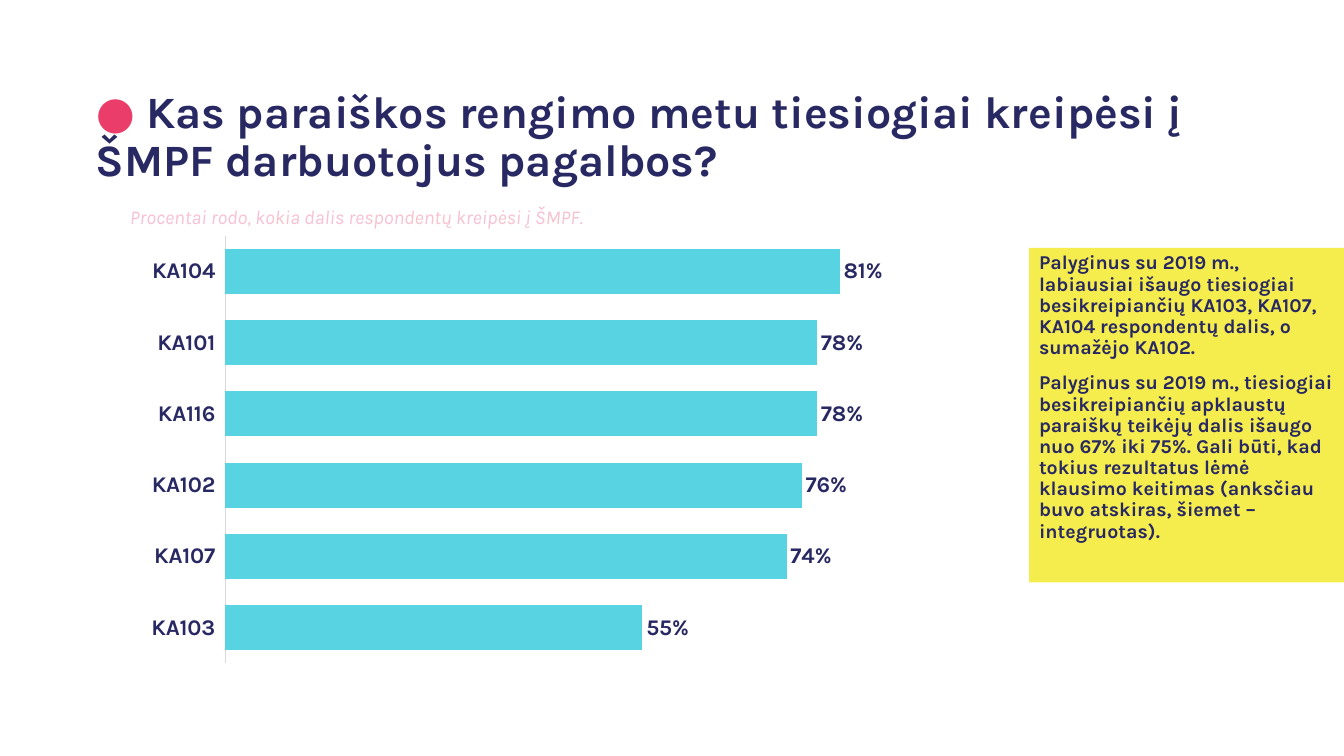
"""Build the slide on which applicants turned directly to ŠMPF staff for help."""
from lxml.etree import SubElement
from pptx import Presentation
from pptx.chart.data import CategoryChartData
from pptx.dml.color import RGBColor
from pptx.enum.chart import XL_CHART_TYPE as ChartType, XL_LABEL_POSITION as LabelPosition
from pptx.enum.chart import XL_TICK_LABEL_POSITION as TickLabels, XL_TICK_MARK as TickMark
from pptx.enum.shapes import MSO_SHAPE as ShapeKind
from pptx.enum.text import MSO_ANCHOR as Anchor, MSO_AUTO_SIZE as AutoSize, PP_ALIGN as Align
from pptx.oxml.ns import qn
from pptx.util import Pt

TITLE = [("● ", "EA3D69"),
         ("Kas paraiškos rengimo metu tiesiogiai kreipėsi į ŠMPF darbuotojus pagalbos?", "282863")]
SUBTITLE = "Procentai rodo, kokia dalis respondentų kreipėsi į ŠMPF."
NOTES = [
    "Palyginus su 2019 m., labiausiai išaugo tiesiogiai besikreipiančių KA103, KA107, "
    "KA104 respondentų dalis, o sumažėjo KA102.",
    "Palyginus su 2019 m., tiesiogiai besikreipiančių apklaustų paraiškų teikėjų dalis išaugo "
    "nuo 67% iki 75%. Gali būti, kad tokius rezultatus lėmė klausimo keitimas "
    "(anksčiau buvo atskiras, šiemet – integruotas).",
]
SHARES = {"KA103": 0.55, "KA107": 0.74, "KA102": 0.76,
          "KA116": 0.78, "KA101": 0.78, "KA104": 0.81}
NAVY, TEAL, YELLOW, PINK, GREY = "282863", "58D3E1", "F5EC4D", "F7C1D0", "D9D9D9"
FONT = "Karla"
SLIDE_SIZE = (960, 540)
TITLE_BOX = (46.8, 60.5, 824.4, 85)
SUBTITLE_BOX = (85.7, 141.1, 569.5, 24.5)
CHART_BOX = (101.5, 162.7, 559.4, 317.5)
NOTES_BOX = (735.1, 177.1, 224.9, 239)
PLOT_AREA = {"x": 0.106, "y": 0.018, "w": 0.872, "h": 0.962}


def color(value):
    return RGBColor.from_string(value)


def box(numbers):
    return [Pt(number) for number in numbers]


def style(font, size, value, bold=False, italic=False):
    font.name, font.size, font.bold, font.italic = FONT, Pt(size), bold, italic
    font.color.rgb = color(value)


def space(paragraph, lines, before=0):
    paragraph.alignment = Align.LEFT
    paragraph.line_spacing = lines
    paragraph.space_before = Pt(before)


def add_title(slide):
    title = slide.shapes.title
    title.left, title.top, title.width, title.height = box(TITLE_BOX)
    frame = title.text_frame
    frame.word_wrap, frame.auto_size = True, AutoSize.NONE
    frame.vertical_anchor = Anchor.TOP
    paragraph = frame.paragraphs[0]
    for text, value in TITLE:
        run = paragraph.add_run()
        run.text = text
        style(run.font, 32, value, bold=True)
    space(paragraph, 0.9, 10)
    properties = paragraph._p.get_or_add_pPr()
    properties.set("marL", str(Pt(14.4)))
    properties.set("indent", "0")


def add_subtitle(slide):
    frame = slide.shapes.add_textbox(*box(SUBTITLE_BOX)).text_frame
    frame.word_wrap = True
    frame.text = SUBTITLE
    paragraph = frame.paragraphs[0]
    space(paragraph, 1.1)
    style(paragraph.runs[0].font, 14, PINK, italic=True)


def add_notes(slide):
    shape = slide.shapes.add_shape(ShapeKind.RECTANGLE, *box(NOTES_BOX))
    shape.shadow.inherit = False
    shape.fill.solid()
    shape.fill.fore_color.rgb = color(YELLOW)
    shape.line.fill.background()
    frame = shape.text_frame
    frame.word_wrap = True
    frame.vertical_anchor = Anchor.TOP
    frame.text = "\n".join(NOTES)
    for paragraph in frame.paragraphs:
        space(paragraph, 0.9, 10)
        style(paragraph.runs[0].font, 14, NAVY, bold=True)


def place_plot(chart):
    plot_area = chart._chartSpace.chart.plotArea
    layout = plot_area.find(qn("c:layout"))
    if layout is None:
        layout = SubElement(plot_area, qn("c:layout"))
        plot_area.insert(0, layout)
    manual = SubElement(layout, qn("c:manualLayout"))
    settings = {"layoutTarget": "inner", "xMode": "edge", "yMode": "edge", **PLOT_AREA}
    for name, value in settings.items():
        SubElement(manual, qn("c:" + name)).set("val", str(value))


def add_chart(slide):
    data = CategoryChartData(number_format="0%")
    data.categories = list(SHARES)
    data.add_series("Series 1", list(SHARES.values()))
    chart = slide.shapes.add_chart(ChartType.BAR_CLUSTERED, *box(CHART_BOX), data).chart
    chart.has_legend = chart.has_title = False
    place_plot(chart)

    categories = chart.category_axis
    categories.major_tick_mark = categories.minor_tick_mark = TickMark.NONE
    categories.tick_label_position = TickLabels.LOW
    categories.format.line.color.rgb = color(GREY)
    categories.format.line.width = Pt(0.75)
    style(categories.tick_labels.font, 16, NAVY, bold=True)

    values = chart.value_axis
    values.minimum_scale, values.maximum_scale = 0, 0.9
    values.has_major_gridlines = False
    values.visible = False

    plot = chart.plots[0]
    plot.gap_width = 59
    plot.vary_by_categories = False
    fill = plot.series[0].format.fill
    fill.solid()
    fill.fore_color.rgb = color(TEAL)
    plot.has_data_labels = True
    labels = plot.data_labels
    labels.show_value = True
    labels.position = LabelPosition.OUTSIDE_END
    labels.number_format, labels.number_format_is_linked = "0%", False
    style(labels.font, 16, NAVY, bold=True)


def main():
    presentation = Presentation()
    presentation.slide_width, presentation.slide_height = box(SLIDE_SIZE)
    slide = presentation.slides.add_slide(presentation.slide_layouts[5])
    add_chart(slide)
    add_title(slide)
    add_notes(slide)
    add_subtitle(slide)
    presentation.save("out.pptx")


if __name__ == "__main__":
    main()
